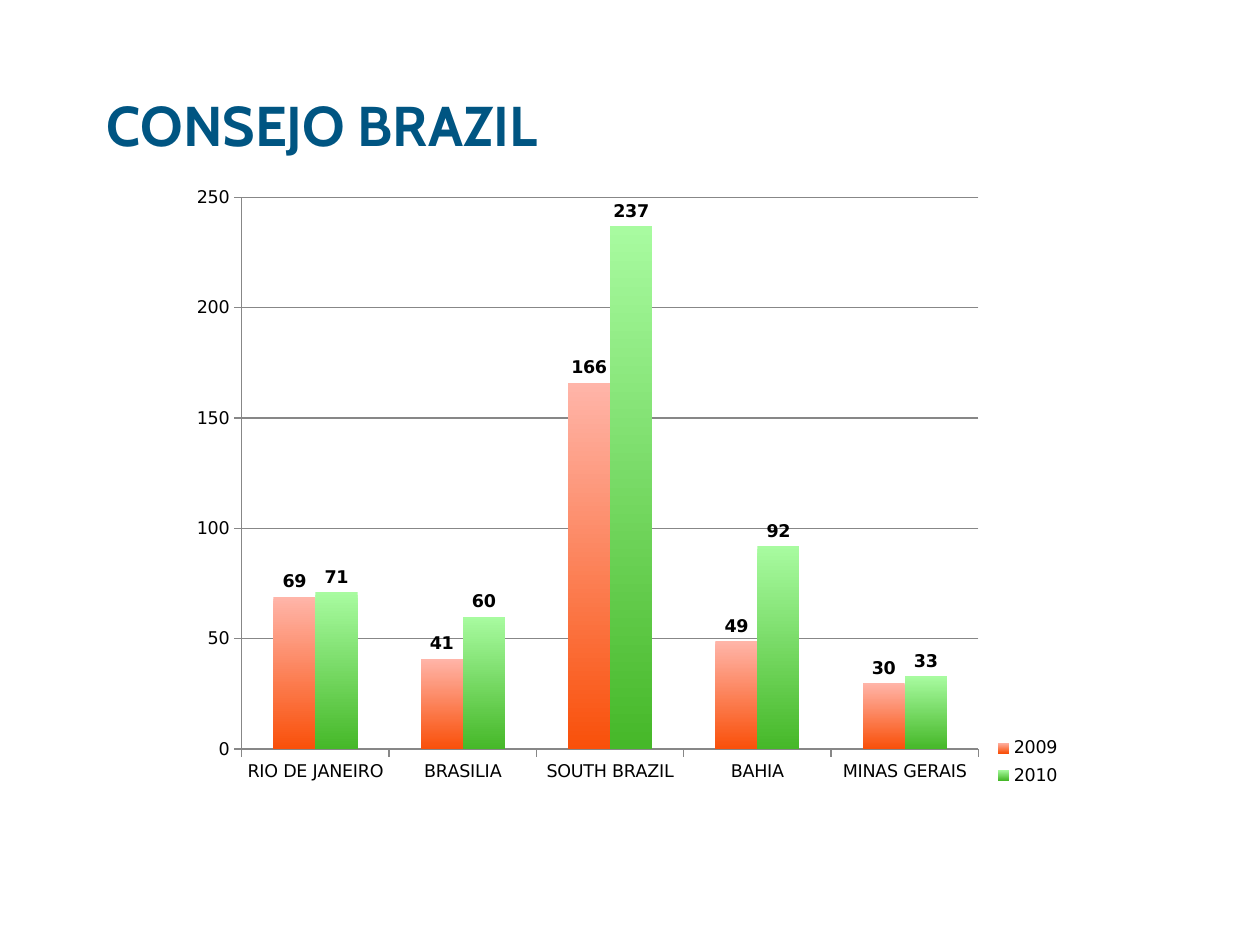
from lxml import etree
from pptx import Presentation
from pptx.chart.data import CategoryChartData
from pptx.dml.color import RGBColor
from pptx.enum.chart import (XL_CHART_TYPE as ChartType, XL_LABEL_POSITION as LabelPos,
                             XL_LEGEND_POSITION as LegendPos, XL_TICK_MARK as Tick)
from pptx.enum.text import MSO_ANCHOR as Anchor
from pptx.oxml.ns import qn
from pptx.util import Inches, Pt

COLORS = {"title": "005582", "text": "000000", "line": "878787"}
CITIES = ["RIO DE JANEIRO", "BRASILIA", "SOUTH BRAZIL", "BAHIA", "MINAS GERAIS"]
# Year: values, gradient from top to bottom
SERIES = {
    "2009": ([69, 41, 166, 49, 30], ("FFB5A9", "F9500A")),
    "2010": ([71, 60, 237, 92, 33], ("A8FBA0", "46B829")),
}


def format_font(font, color, **values):
    for name, value in values.items():
        setattr(font, name, value)
    font.color.rgb = RGBColor.from_string(COLORS[color])


def add_title(s, text):
    tf = s.shapes.add_textbox(Inches(0.75), Inches(0.67), Inches(8.5), Inches(1.25)).text_frame
    tf.word_wrap = True
    tf.vertical_anchor = Anchor.TOP
    r = tf.paragraphs[0].add_run()
    r.text = text
    format_font(r.font, "title", name="Cabin", size=Pt(32), bold=True)


def set_layout(element, x, y, w, h, inner=False):
    """Place a chart part by fractions of the chart's size."""
    layout = element.find(qn("c:layout"))
    if layout is None:
        layout = etree.Element(qn("c:layout"))
        if inner:
            element.insert(0, layout)
        else:
            element.find(qn("c:legendPos")).addnext(layout)
    for child in list(layout):
        layout.remove(child)
    manual = etree.SubElement(layout, qn("c:manualLayout"))
    values = {"layoutTarget": "inner"} if inner else {}
    values.update(xMode="edge", yMode="edge", x=x, y=y, w=w, h=h)
    for tag, value in values.items():
        etree.SubElement(manual, qn(f"c:{tag}")).set("val", str(value))


def style_line(line):
    line.color.rgb = RGBColor.from_string(COLORS["line"])
    line.width = Pt(0.75)


def style_series(series, gradient):
    fill = series.format.fill
    fill.gradient()
    fill.gradient_angle = 270
    for stop, color in zip(fill.gradient_stops, gradient):
        stop.color.rgb = RGBColor.from_string(color)
    labels = series.data_labels
    labels.show_value = True
    labels.position = LabelPos.OUTSIDE_END
    format_font(labels.font, "text", name="DejaVu Sans", size=Pt(10), bold=True)


def add_column_chart(s):
    data = CategoryChartData()
    data.categories = CITIES
    for year, (values, _) in SERIES.items():
        data.add_series(year, values)
    chart = s.shapes.add_chart(ChartType.COLUMN_CLUSTERED, Inches(1.42), Inches(1.42),
                               Inches(7.13), Inches(4.92), data).chart
    chart.has_title = False
    format_font(chart.font, "text", name="DejaVu Sans", size=Pt(10))

    # Columns
    plot = chart.plots[0]
    plot.gap_width, plot.overlap, plot.vary_by_categories = 75, 0, False
    plot.gap_width = 150
    for series, (_, gradient) in zip(plot.series, SERIES.values()):
        style_series(series, gradient)

    # Axes
    for axis in (chart.category_axis, chart.value_axis):
        axis.major_tick_mark, axis.minor_tick_mark = Tick.OUTSIDE, Tick.NONE
        style_line(axis.format.line)
    value_axis = chart.value_axis
    value_axis.minimum_scale, value_axis.maximum_scale, value_axis.major_unit = 0, 250, 50
    value_axis.has_major_gridlines = True
    style_line(value_axis.major_gridlines.format.line)

    # Legend and placement
    chart.has_legend = True
    legend = chart.legend
    legend.position, legend.include_in_layout = LegendPos.RIGHT, False
    plot_area = chart.element.find(".//" + qn("c:plotArea"))
    set_layout(plot_area, 0.07, 0.03, 0.82, 0.89, inner=True)
    set_layout(chart.element.find(".//" + qn("c:legend")), 0.9, 0.89, 0.09, 0.1)


def main():
    prs = Presentation()
    prs.slide_width, prs.slide_height = Inches(10), Inches(7.5)
    s = prs.slides.add_slide(prs.slide_layouts[6])
    add_title(s, "CONSEJO BRAZIL")
    add_column_chart(s)
    prs.save("out.pptx")


if __name__ == "__main__":
    main()
